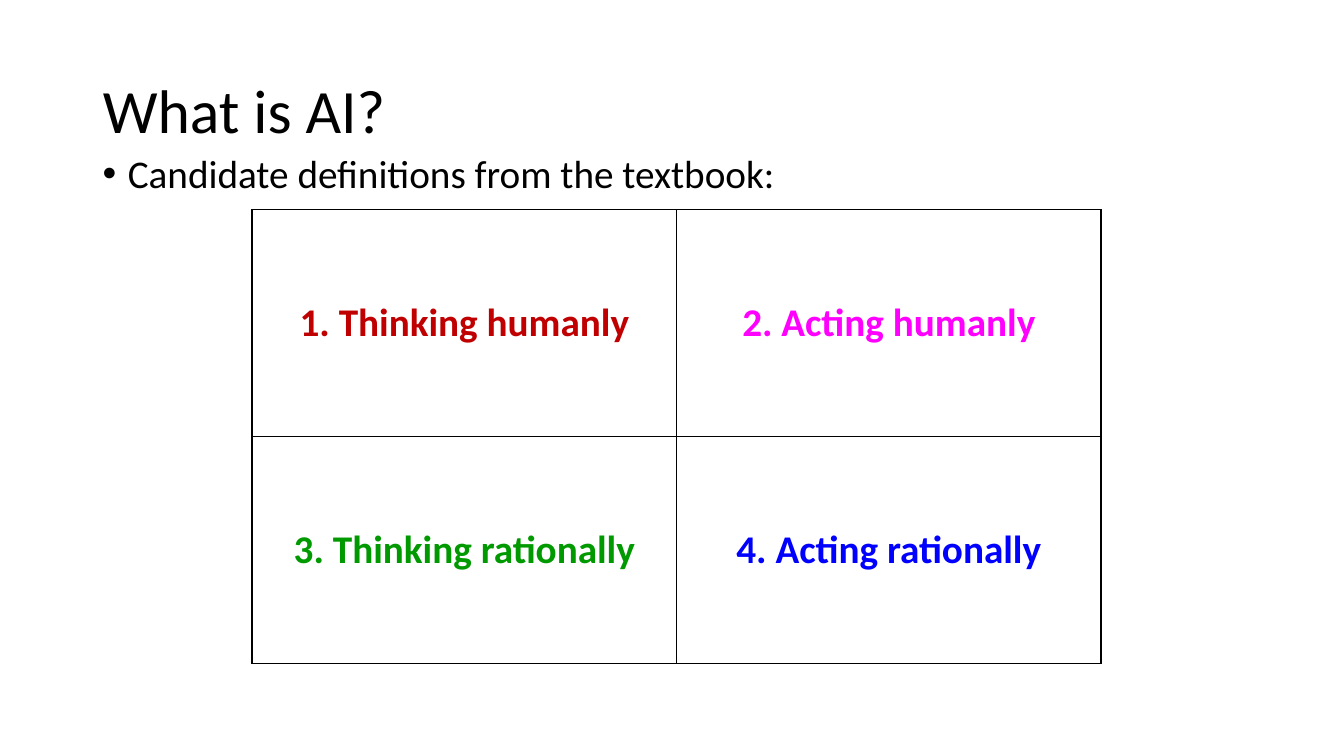
from dataclasses import dataclass

from lxml.etree import SubElement
from pptx import Presentation
from pptx.dml.color import RGBColor
from pptx.enum.text import MSO_ANCHOR as Anchor, MSO_AUTO_SIZE as AutoSize, PP_ALIGN as Align
from pptx.oxml.ns import qn
from pptx.table import _Cell as Cell
from pptx.text.text import TextFrame, _Paragraph as Paragraph
from pptx.util import Inches, Pt

BLACK = "000000"
WHITE = "FFFFFF"
TEXT_LEFT, TEXT_WIDTH = Inches(0.92), Inches(11.5)


@dataclass(frozen=True)
class Definition:
    label: str
    color: str


DEFINITIONS = [
    [Definition("1. Thinking humanly", "C00000"), Definition("2. Acting humanly", "FF00FF")],
    [Definition("3. Thinking rationally", "009900"), Definition("4. Acting rationally", "0000FF")],
]


def rgb(color: str) -> RGBColor:
    return RGBColor.from_string(color)


def write(frame: TextFrame, text: str, *, size: float = 28, color: str = BLACK,
          bold: bool = False, align: Align = Align.LEFT,
          line_spacing: float | None = None, space_before: float = 0) -> Paragraph:
    paragraph = frame.paragraphs[0]
    paragraph.alignment = align
    paragraph.space_before = Pt(space_before)
    if line_spacing is not None:
        paragraph.line_spacing = line_spacing
    run = paragraph.add_run()
    run.text = text
    run.font.name = "Calibri"
    run.font.size = Pt(size)
    run.font.bold = bold
    run.font.color.rgb = rgb(color)
    return paragraph


def add_bullet(paragraph: Paragraph, indent: int) -> None:
    properties = paragraph._p.get_or_add_pPr()
    properties.set("marL", str(indent))
    properties.set("indent", str(-indent))
    SubElement(properties, qn("a:buFont"), typeface="Arial")
    SubElement(properties, qn("a:buChar"), char="•")


def add_borders(cell: Cell, color: str, width: float) -> None:
    properties = cell._tc.get_or_add_tcPr()
    for side in ("lnL", "lnR", "lnT", "lnB"):
        line = SubElement(properties, qn(f"a:{side}"), w=str(Pt(width)))
        fill = SubElement(line, qn("a:solidFill"))
        SubElement(fill, qn("a:srgbClr"), val=color)


def fill_cell(cell: Cell, definition: Definition) -> None:
    add_borders(cell, BLACK, 1)
    cell.fill.solid()
    cell.fill.fore_color.rgb = rgb(WHITE)
    cell.vertical_anchor = Anchor.MIDDLE
    write(cell.text_frame, definition.label, color=definition.color,
          bold=True, align=Align.CENTER)


def main() -> None:
    deck = Presentation()
    deck.slide_width, deck.slide_height = Inches(13.33), Inches(7.5)
    slide = deck.slides.add_slide(deck.slide_layouts[5])

    title = slide.shapes.title
    title.left, title.top = TEXT_LEFT, Inches(0.4)
    title.width, title.height = TEXT_WIDTH, Inches(1.45)
    title.text_frame.auto_size = AutoSize.NONE
    title.text_frame.vertical_anchor = Anchor.MIDDLE
    write(title.text_frame, "What is AI?", size=44, line_spacing=0.9)

    intro = slide.shapes.add_textbox(TEXT_LEFT, Inches(1.48), TEXT_WIDTH, Inches(5.28))
    intro.text_frame.word_wrap = True
    statement = write(intro.text_frame, "Candidate definitions from the textbook:",
                      line_spacing=0.9, space_before=10)
    add_bullet(statement, Inches(0.25))

    grid = slide.shapes.add_table(len(DEFINITIONS), len(DEFINITIONS[0]), Inches(2.5),
                                  Inches(2.08), Inches(8.42), Inches(4.5)).table
    grid.first_row = grid.horz_banding = False
    for row, definitions in enumerate(DEFINITIONS):
        for column, definition in enumerate(definitions):
            fill_cell(grid.cell(row, column), definition)

    deck.save("out.pptx")


if __name__ == "__main__":
    main()
